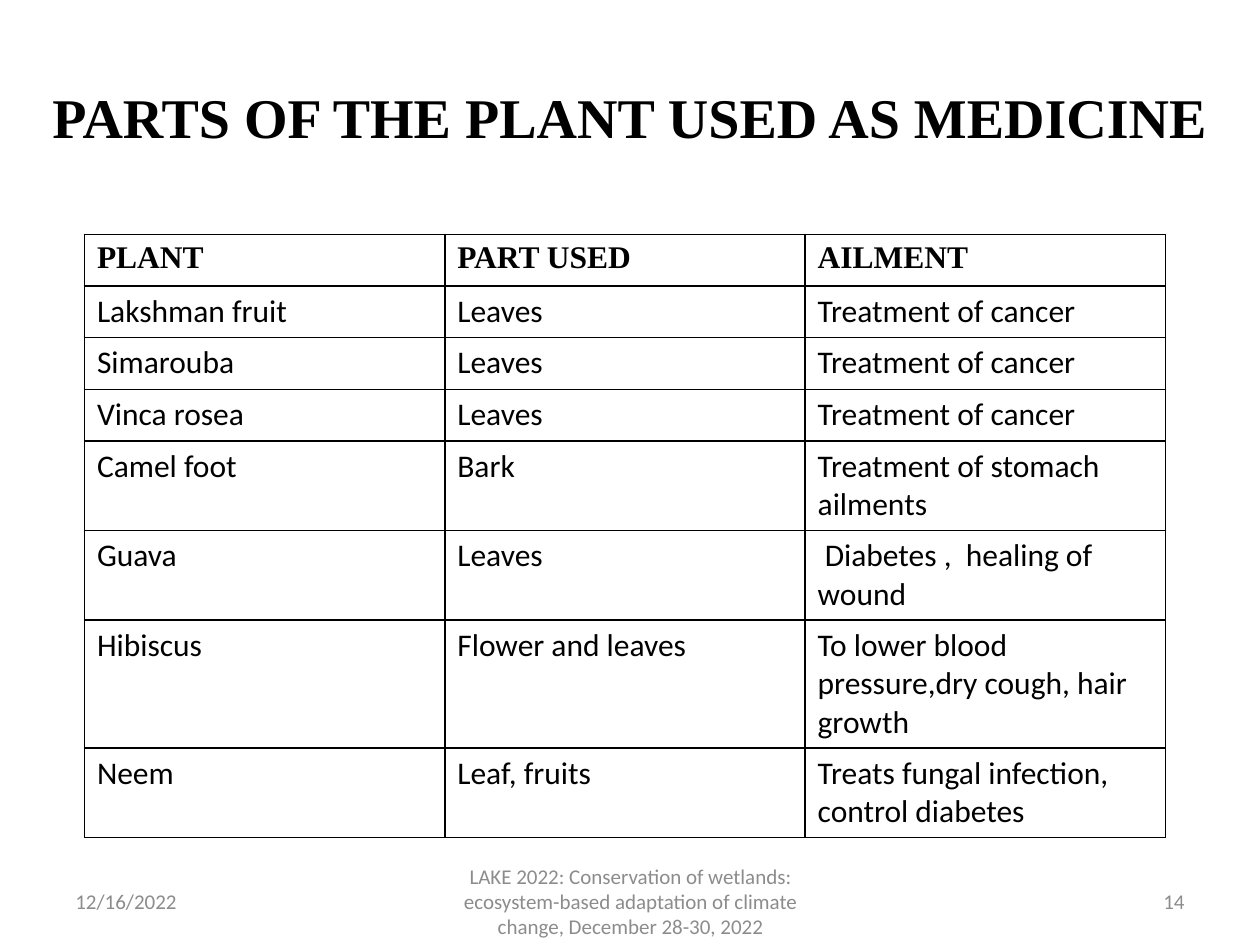
import pptx
import pptx.util
import pptx.dml.color
import pptx.enum.text
import pptx.oxml
import pptx.oxml.ns
import lxml.etree

BLACK = pptx.dml.color.RGBColor(0x00, 0x00, 0x00)
GREY = pptx.dml.color.RGBColor(0x8C, 0x8C, 0x8C)
ALIGN = pptx.enum.text.PP_ALIGN
MIDDLE = pptx.enum.text.MSO_ANCHOR.MIDDLE
HEADING_FONT, BODY_FONT = "Times New Roman", "Calibri"

deck = pptx.Presentation()
deck.slide_width = pptx.util.Inches(10)
deck.slide_height = pptx.util.Inches(7.5)
W, H = deck.slide_width, deck.slide_height
slide = deck.slides.add_slide(deck.slide_layouts[5])


def add_run(paragraph, text, size, font, color, bold=False):
    run = paragraph.add_run()
    run.text = text
    run.font.size = pptx.util.Pt(size)
    run.font.name = font
    run.font.color.rgb = color
    run.font.bold = bold


def add_borders(cell):
    properties = cell._tc.get_or_add_tcPr()
    for position, side in enumerate(("lnL", "lnR", "lnT", "lnB")):
        line = lxml.etree.Element(pptx.oxml.ns.qn(f"a:{side}"), w="12700")
        fill = lxml.etree.SubElement(line, pptx.oxml.ns.qn("a:solidFill"))
        lxml.etree.SubElement(fill, pptx.oxml.ns.qn("a:srgbClr"), val=str(BLACK))
        properties.insert(position, line)


# Title
title = slide.shapes.title
title.left, title.top = 0, int(0.04 * H)
title.width, title.height = W, int(H / 6)
title.text_frame.vertical_anchor = MIDDLE
heading = title.text_frame.paragraphs[0]
heading.alignment = ALIGN.CENTER
add_run(heading, "PARTS OF THE PLANT USED AS MEDICINE", 32, HEADING_FONT, BLACK, True)

# Plants, the part used and the ailment treated
remedies = [
    ("PLANT", "PART USED", "AILMENT"),
    ("Lakshman fruit", "Leaves", "Treatment of cancer"),
    ("Simarouba", "Leaves", "Treatment of cancer"),
    ("Vinca rosea", "Leaves", "Treatment of cancer"),
    ("Camel foot", "Bark", "Treatment of stomach ailments"),
    ("Guava", "Leaves", " Diabetes ,  healing of wound"),
    ("Hibiscus", "Flower and leaves", "To lower blood pressure,dry cough, hair growth"),
    ("Neem", "Leaf, fruits", "Treats fungal infection, control diabetes"),
]
row_height = pptx.util.Inches(0.41)
remedy_table = slide.shapes.add_table(
    len(remedies), len(remedies[0]),
    int(0.067 * W), int(0.248 * H), int(0.858 * W), row_height * len(remedies),
).table
remedy_table.horz_banding = False
for r, remedy in enumerate(remedies):
    remedy_table.rows[r].height = row_height
    for c, entry in enumerate(remedy):
        cell = remedy_table.cell(r, c)
        cell.fill.background()
        add_borders(cell)
        font = HEADING_FONT if r == 0 else BODY_FONT
        add_run(cell.text_frame.paragraphs[0], entry, 18, font, BLACK, r == 0)

# Footer: date, conference, page number
conference = ("LAKE 2022: Conservation of wetlands: ecosystem-based adaptation "
              "of climate change, December 28-30, 2022")
footer = [
    ("12/16/2022", 0.05, 0.233, ALIGN.LEFT),
    (conference, 0.342, 0.317, ALIGN.CENTER),
    ("14", 0.717, 0.233, ALIGN.RIGHT),
]
for note, left, width, alignment in footer:
    frame = slide.shapes.add_textbox(
        int(left * W), int(0.927 * H), int(width * W), int(0.053 * H)
    ).text_frame
    frame.word_wrap = True
    frame.vertical_anchor = MIDDLE
    frame.paragraphs[0].alignment = alignment
    add_run(frame.paragraphs[0], note, 12, BODY_FONT, GREY)

deck.save("out.pptx")
